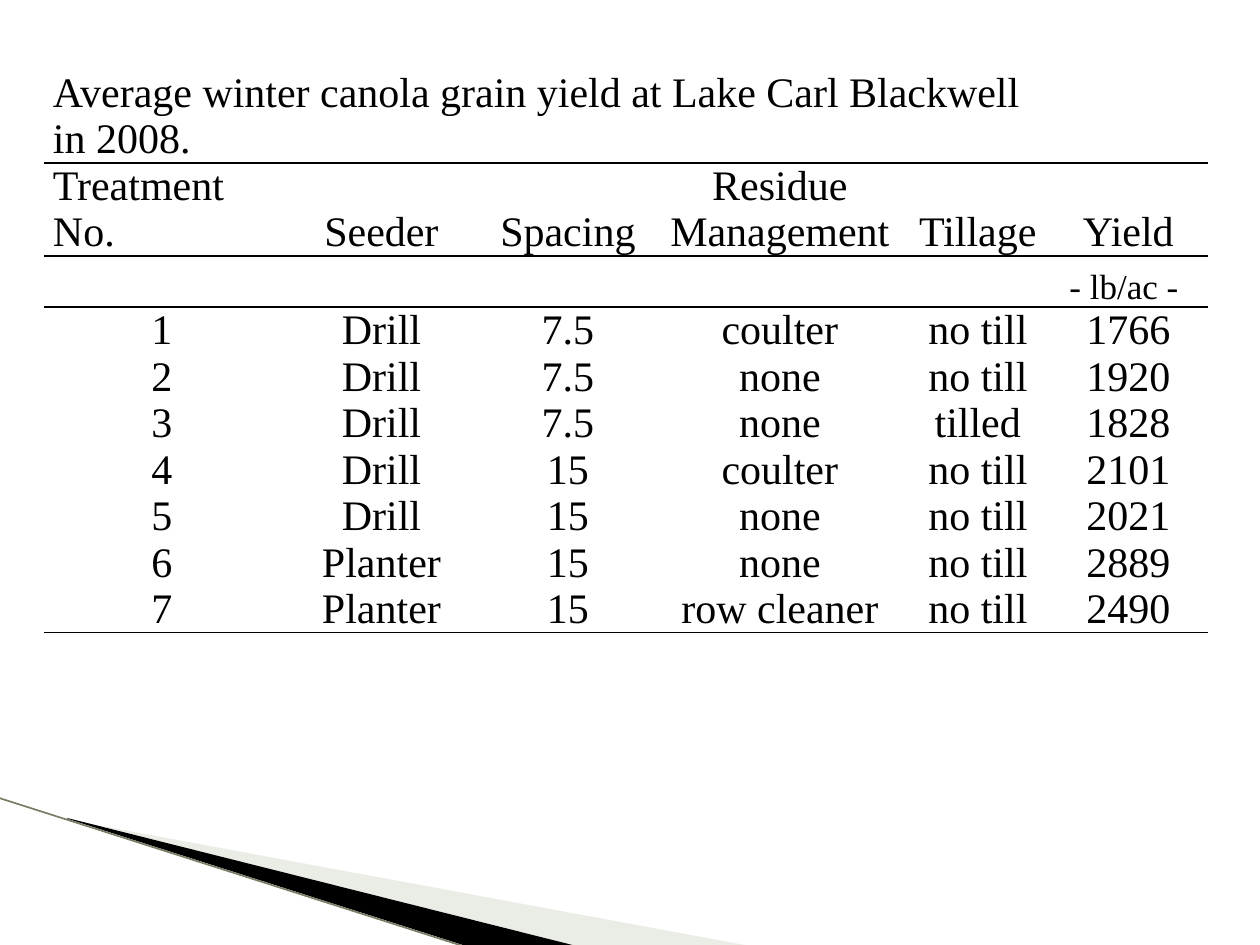
from lxml import etree
from pptx import Presentation
from pptx import util as u
from pptx.dml.color import RGBColor
from pptx.enum import shapes, text
from pptx.oxml import ns

PX = 914400 / 126
NO_STYLE = "{2D5ABB26-0587-4C30-8999-92F81FD0307C}"
BLACK = "000000"


def px(length):
    return u.Emu(round(length * PX))


def colour(value):
    return RGBColor.from_string(value)


def apply(target, values):
    for name, value in values.items():
        setattr(target, name, value)


def child(parent, tag, **attributes):
    return etree.SubElement(parent, ns.qn(tag), attributes)


class SlideBuilder:
    font = {"name": "Times New Roman", "size": u.Pt(24)}
    cell_format = {
        "vertical_anchor": text.MSO_ANCHOR.BOTTOM,
        "margin_left": px(9), "margin_right": px(9),
        "margin_top": 0, "margin_bottom": 0,
    }

    def __init__(self, page):
        self.page = page

    def polygon(self, points, fill, opacity=100):
        builder = self.page.shapes.build_freeform(*points[0], scale=PX)
        builder.add_line_segments(points[1:], close=True)
        shape = builder.convert_to_shape()
        shape.shadow.inherit = False
        shape.fill.solid()
        shape.fill.fore_color.rgb = colour(fill)
        shape.line.fill.background()
        if opacity < 100:
            fill_colour = shape.fill._xPr.find(".//" + ns.qn("a:srgbClr"))
            child(fill_colour, "a:alpha", val=str(opacity * 1000))

    def line(self, start, end, stroke, width):
        connector = self.page.shapes.add_connector(
            shapes.MSO_CONNECTOR.STRAIGHT, *map(px, start + end))
        connector.line.color.rgb = colour(stroke)
        connector.line.width = u.Pt(width)
        child(connector._element.spPr, "a:effectLst")

    def table(self, left, top, widths, heights):
        """Add an unstyled, empty table and return it."""
        frame = self.page.shapes.add_table(
            len(heights), len(widths), px(left), px(top),
            px(sum(widths)), px(sum(heights)))
        table = frame.table
        apply(table, {"first_row": False, "horz_banding": False})
        table._tbl.tblPr.find(ns.qn("a:tableStyleId")).text = NO_STYLE
        for column, width in zip(table.columns, widths):
            column.width = px(width)
        for row, height in zip(table.rows, heights):
            row.height = px(height)
        return table

    def cell(self, cell, words, align, edges, **font):
        apply(cell, self.cell_format)
        cell.fill.background()
        para = cell.text_frame.paragraphs[0]
        para.alignment = align
        para.font.size = self.font["size"]
        if words:
            span = para.add_run()
            span.text = words
            apply(span.font, {**self.font, **font})
            span.font.color.rgb = colour(BLACK)
        for position, edge in enumerate(edges):
            border = etree.Element(ns.qn("a:ln" + edge), w=str(u.Pt(1)))
            child(child(border, "a:solidFill"), "a:srgbClr", val=BLACK)
            cell._tc.tcPr.insert(position, border)


CAPTION = "Average winter canola grain yield at Lake Carl Blackwell in 2008."
HEADINGS = ("Treatment No.", "Seeder", "Spacing", "Residue Management",
            "Tillage", "Yield")
UNITS = ("", "", "", "", "", "- lb/ac - ")
TREATMENTS = [
    ("1", "Drill", "7.5", "coulter", "no till", "1766"),
    ("2", "Drill", "7.5", "none", "no till", "1920"),
    ("3", "Drill", "7.5", "none", "tilled", "1828"),
    ("4", "Drill", "15", "coulter", "no till", "2101"),
    ("5", "Drill", "15", "none", "no till", "2021"),
    ("6", "Planter", "15", "none", "no till", "2889"),
    ("7", "Planter", "15", "row cleaner", "no till", "2490"),
]
COLUMN_WIDTHS = (236, 203, 170, 136, 118, 142, 159)
CAPTION_SPAN = 6
RESIDUE = 3


def add_corner(slide):
    slide.polygon([(69, 820), (750, 946), (575, 946), (69, 819)],
                  "CBD4C0", opacity=40)
    slide.polygon([(67, 818), (576, 946), (469, 947), (68, 819)], BLACK)
    slide.line((-1, 798), (469, 948), "7B7B66", 0.95)


def add_yields(slide):
    rows = [(CAPTION,) + ("",) * 5, HEADINGS, UNITS] + TREATMENTS
    last = len(rows) - 1
    heights = [93, 93] + [46] * (last - 1)
    edges = {0: "B", 1: "TB", 2: "T", last: "B"}
    table = slide.table(44, 70, COLUMN_WIDTHS, heights)
    table.cell(0, 0).merge(table.cell(0, CAPTION_SPAN - 1))
    for number, values in enumerate(rows):
        if number not in (0, 2):
            table.cell(number, RESIDUE).merge(table.cell(number, RESIDUE + 1))
        words = values[:RESIDUE + 1] + ("",) + values[RESIDUE + 1:]
        for column, word in enumerate(words):
            left = number == 0 or (number == 1 and column == 0)
            align = text.PP_ALIGN.LEFT if left else text.PP_ALIGN.CENTER
            font = {"size": u.Pt(20)} if number == 2 else {}
            slide.cell(table.cell(number, column), word, align,
                       edges.get(number, ""), **font)


def main():
    deck = Presentation()
    apply(deck, {"slide_width": px(1260), "slide_height": px(945)})
    slide = SlideBuilder(deck.slides.add_slide(deck.slide_layouts[6]))
    add_corner(slide)
    add_yields(slide)
    deck.save("out.pptx")


if __name__ == "__main__":
    main()
